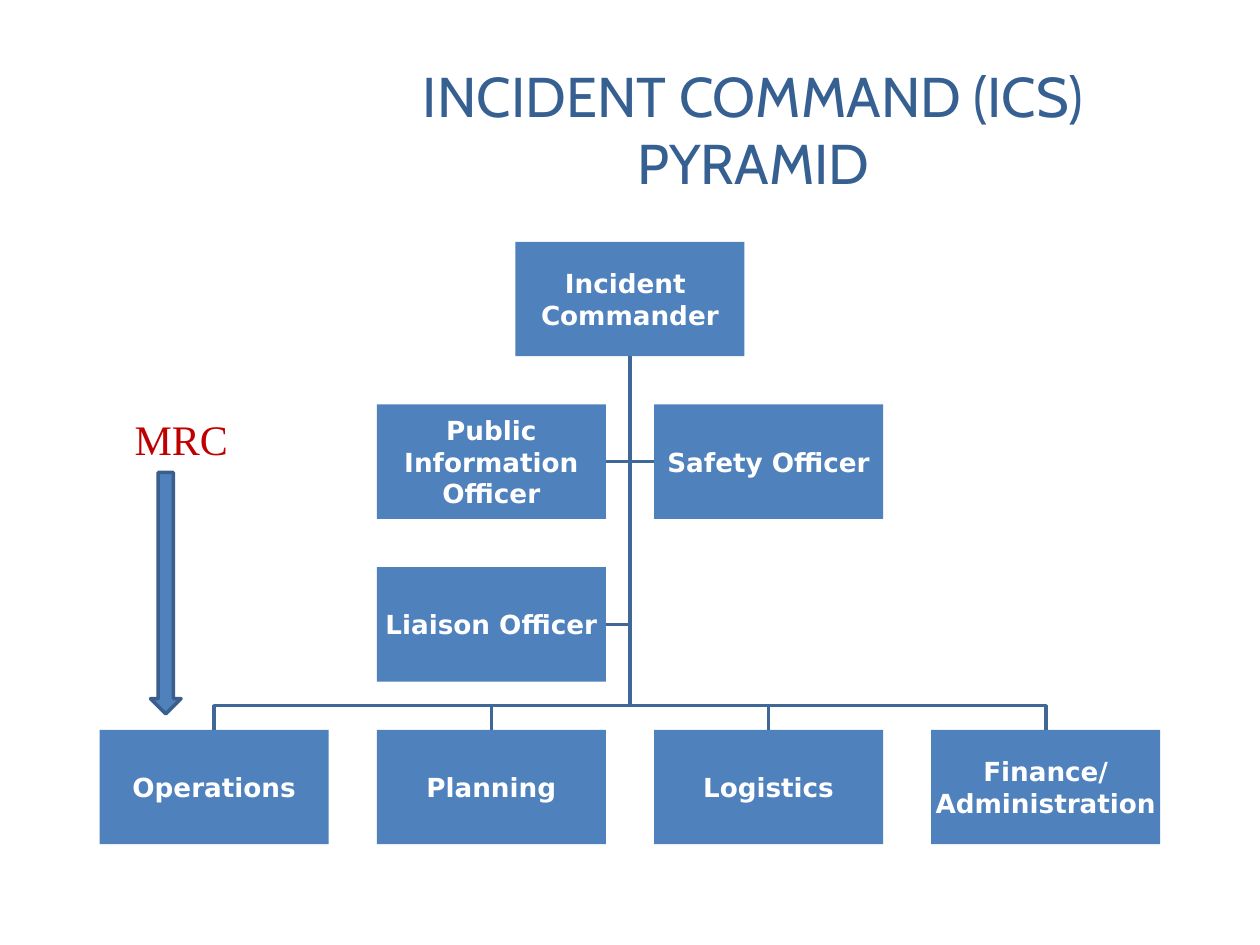
from pptx import Presentation
from pptx.dml.color import RGBColor
from pptx.enum.shapes import MSO_SHAPE
from pptx.enum.text import MSO_ANCHOR, PP_ALIGN
from pptx.util import Pt

RECTANGLE, DOWN_ARROW = MSO_SHAPE.RECTANGLE, MSO_SHAPE.DOWN_ARROW
TOP, MIDDLE, CENTER = MSO_ANCHOR.TOP, MSO_ANCHOR.MIDDLE, PP_ALIGN.CENTER

TITLE = "INCIDENT COMMAND (ICS) PYRAMID"
TEAM = "MRC"
COMMANDER = ["Incident ", "Commander"]
STAFF = [
    (["Liaison Officer"], -0.5, 2),
    (["Public", " Information ", "Officer"], -0.5, 1),
    (["Safety Officer"], 0.5, 1),
]
SECTIONS = [["Operations"], ["Planning"], ["Logistics"], ["Finance/", "Administration"]]

THEME = {
    "title": {"font": "Cabin", "size": 32, "color": "376092"},
    "box": {"font": "DejaVu Sans", "size": 15, "color": "FFFFFF", "bold": True},
    "team": {"font": "Times New Roman", "size": 24, "color": "C00000"},
    "fill": "4F81BD",
    "branch": "3F6797",
    "arrow_line": "3A5F8C",
    "line_width": 2,
}

CENTER_X, TOP_Y = 360, 138.2
BOX_W, BOX_H = 130.9, 65.4
COLUMN_STEP, ROW_STEP = 158.4, 92.95
STEM_Y = TOP_Y + BOX_H
SECTION_Y = TOP_Y + 3 * ROW_STEP
BUS_Y = SECTION_Y - (COLUMN_STEP - BOX_W) / 2


def write(shape, lines, font, size, color, bold=False, anchor=MIDDLE, inset=(7.2, 3.6)):
    frame = shape.text_frame
    frame.word_wrap = True
    frame.vertical_anchor = anchor
    frame.margin_left = frame.margin_right = Pt(inset[0])
    frame.margin_top = frame.margin_bottom = Pt(inset[1])
    for index, line in enumerate(lines):
        paragraph = frame.add_paragraph() if index else frame.paragraphs[0]
        paragraph.alignment = CENTER
        run = paragraph.add_run()
        run.text = line
        run.font.name = font
        run.font.size = Pt(size)
        run.font.bold = bold
        run.font.color.rgb = RGBColor.from_string(color)


def add_label(slide, text, left, top, width, height, **style):
    label = slide.shapes.add_textbox(Pt(left), Pt(top), Pt(width), Pt(height))
    write(label, [text], **style)


def outline(shape, color):
    shape.shadow.inherit = False
    shape.line.color.rgb = RGBColor.from_string(color)
    shape.line.width = Pt(THEME["line_width"])


def add_filled(slide, preset, left, top, width, height):
    shape = slide.shapes.add_shape(preset, Pt(left), Pt(top), Pt(width), Pt(height))
    shape.shadow.inherit = False
    shape.fill.solid()
    shape.fill.fore_color.rgb = RGBColor.from_string(THEME["fill"])
    return shape


def add_box(slide, lines, column, row):
    left = CENTER_X + column * COLUMN_STEP - BOX_W / 2
    box = add_filled(slide, RECTANGLE, left, TOP_Y + row * ROW_STEP, BOX_W, BOX_H)
    box.line.fill.background()
    write(box, lines, inset=(0.7, 0.7), **THEME["box"])


def add_branch(slide, *bends):
    builder = slide.shapes.build_freeform(Pt(CENTER_X), Pt(STEM_Y))
    builder.add_line_segments([(Pt(x), Pt(y)) for x, y in bends], close=False)
    branch = builder.convert_to_shape()
    branch.fill.background()
    outline(branch, THEME["branch"])


def main():
    deck = Presentation()
    deck.slide_width, deck.slide_height = Pt(720), Pt(540)
    slide = deck.slides.add_slide(deck.slide_layouts[6])

    add_label(slide, TITLE, 167, 32.4, 527, 82, **THEME["title"])

    sections = [(lines, index - 1.5, 3) for index, lines in enumerate(SECTIONS)]
    for _, column, row in STAFF:
        y = TOP_Y + row * ROW_STEP + BOX_H / 2
        side = 1 if column > 0 else -1
        edge = CENTER_X + side * (COLUMN_STEP - BOX_W) / 2
        add_branch(slide, (CENTER_X, y), (edge, y))
    for _, column, _ in sections:
        x = CENTER_X + column * COLUMN_STEP
        add_branch(slide, (CENTER_X, BUS_Y), (x, BUS_Y), (x, SECTION_Y))

    for lines, column, row in [(COMMANDER, 0, 0)] + sections + STAFF:
        add_box(slide, lines, column, row)

    arrow = add_filled(slide, DOWN_ARROW, 86, 270, 17.5, 138)
    outline(arrow, THEME["arrow_line"])
    add_label(slide, TEAM, 62.6, 232.6, 82, 36, anchor=TOP, **THEME["team"])

    deck.save("out.pptx")


if __name__ == "__main__":
    main()
